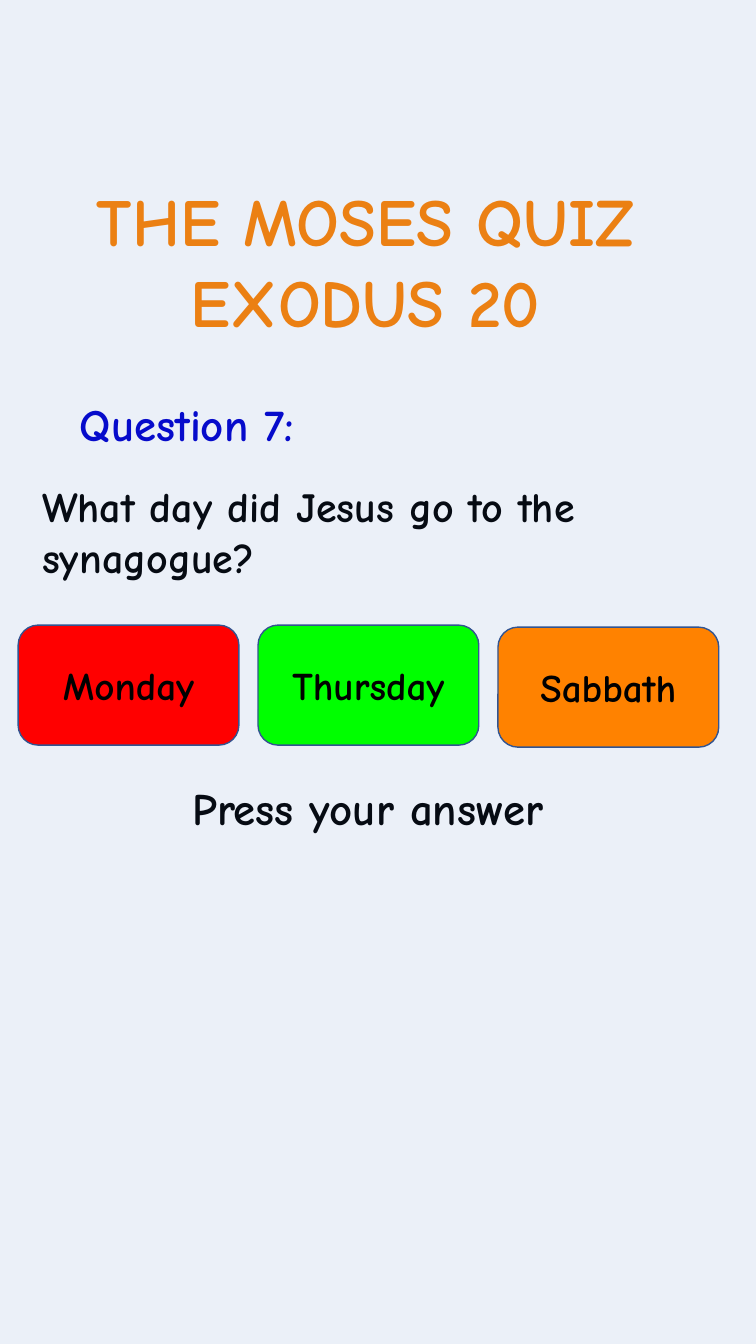
import pptx
import pptx.util
import pptx.dml.color
import pptx.enum.shapes
import pptx.enum.text
import lxml.etree

WIDTH, HEIGHT = 7.5, 13.33
FONT = "Comic Neue"
BLACK = "000000"
CENTER = pptx.enum.text.PP_ALIGN.CENTER
LEFT = pptx.enum.text.PP_ALIGN.LEFT
TOP = pptx.enum.text.MSO_ANCHOR.TOP
MIDDLE = pptx.enum.text.MSO_ANCHOR.MIDDLE
ANSWERS = [("Monday", "FF0000", 0), ("Thursday", "00FF00", 0), ("Sabbath", "FF8200", 0.02)]


def color(value):
    """Turn a hex string into a colour."""
    return pptx.dml.color.RGBColor.from_string(value)


def inches(box):
    """Turn a box in inches into slide lengths."""
    return [pptx.util.Inches(length) for length in box]


def write(shape, lines, size, ink, alignment=LEFT, anchor=TOP, wrap=True, spacing=None, before=0):
    """Write one bold paragraph per line into a shape."""
    frame = shape.text_frame
    frame.word_wrap = wrap
    frame.vertical_anchor = anchor
    for index, line in enumerate(lines):
        paragraph = frame.add_paragraph() if index else frame.paragraphs[0]
        paragraph.alignment = alignment
        paragraph.space_before = pptx.util.Pt(before)
        if spacing:
            paragraph.line_spacing = spacing
        run = paragraph.add_run()
        run.text = line
        run.font.name = FONT
        run.font.size = pptx.util.Pt(size)
        run.font.bold = True
        run.font.color.rgb = color(ink)


def add_panel(slide, kind, box, fill):
    """Add a filled shape with a thin blue outline."""
    shape = slide.shapes.add_shape(kind, *inches(box))
    shape.shadow.inherit = False
    shape.fill.solid()
    shape.fill.fore_color.rgb = color(fill)
    shape.line.color.rgb = color("325491")
    shape.line.width = pptx.util.Pt(1)
    return shape


def add_title(slide, box):
    """Place and write the quiz title."""
    title = slide.shapes.title
    title.left, title.top, title.width, title.height = inches(box)
    title.text_frame.auto_size = pptx.enum.text.MSO_AUTO_SIZE.SHAPE_TO_FIT_TEXT
    write(title, ["THE MOSES QUIZ ", "EXODUS 20 "], 48, "FF8200", CENTER, wrap=False)


def add_text(slide, box, line, size, ink, **style):
    """Add a text box with one line of wording."""
    write(slide.shapes.add_textbox(*inches(box)), [line], size, ink, **style)


def add_tint(slide, bleed):
    """Cover the slide with a faint blue tint."""
    box = (-bleed, -bleed, WIDTH + 2 * bleed, HEIGHT + 2 * bleed)
    tint = add_panel(slide, pptx.enum.shapes.MSO_SHAPE.RECTANGLE, box, "4472C4")
    fill_color = tint.fill._xPr.find(".//" + pptx.oxml.ns.qn("a:srgbClr"))
    lxml.etree.SubElement(fill_color, pptx.oxml.ns.qn("a:alpha"), val="10000")


def add_answers(slide, box, gap):
    """Add the answer buttons in equal columns of the box."""
    left, top, width, height = box
    column = (width - gap * (len(ANSWERS) - 1)) / len(ANSWERS)
    for index, (answer, fill, drop) in enumerate(ANSWERS):
        place = (left + index * (column + gap), top + drop, column, height)
        button = add_panel(slide, pptx.enum.shapes.MSO_SHAPE.ROUNDED_RECTANGLE, place, fill)
        write(button, [answer], 28, BLACK, CENTER, MIDDLE)


def main():
    """Build the quiz slide and save it."""
    presentation = pptx.Presentation()
    presentation.slide_width, presentation.slide_height = inches((WIDTH, HEIGHT))
    slide = presentation.slides.add_slide(presentation.slide_layouts[5])
    add_title(slide, (0.3, 1.73, 6.89, 1.72))
    add_text(slide, (1.81, 7.75, 4.22, 0.72), "Press your answer", 32, BLACK,
             spacing=0.9, before=7.5)
    add_text(slide, (0.32, 4.72, 7.02, 1.19), "What day did Jesus go to the synagogue?", 30, BLACK,
             spacing=pptx.util.Pt(36), before=7.5)
    add_text(slide, (0.47, 3.89, 2.77, 0.64), "Question 7:", 32, "0000CC",
             alignment=CENTER, wrap=False)
    add_tint(slide, 0.25)
    add_answers(slide, (0.18, 6.2, 6.95, 1.19), 0.19)
    presentation.save("out.pptx")


if __name__ == "__main__":
    main()
